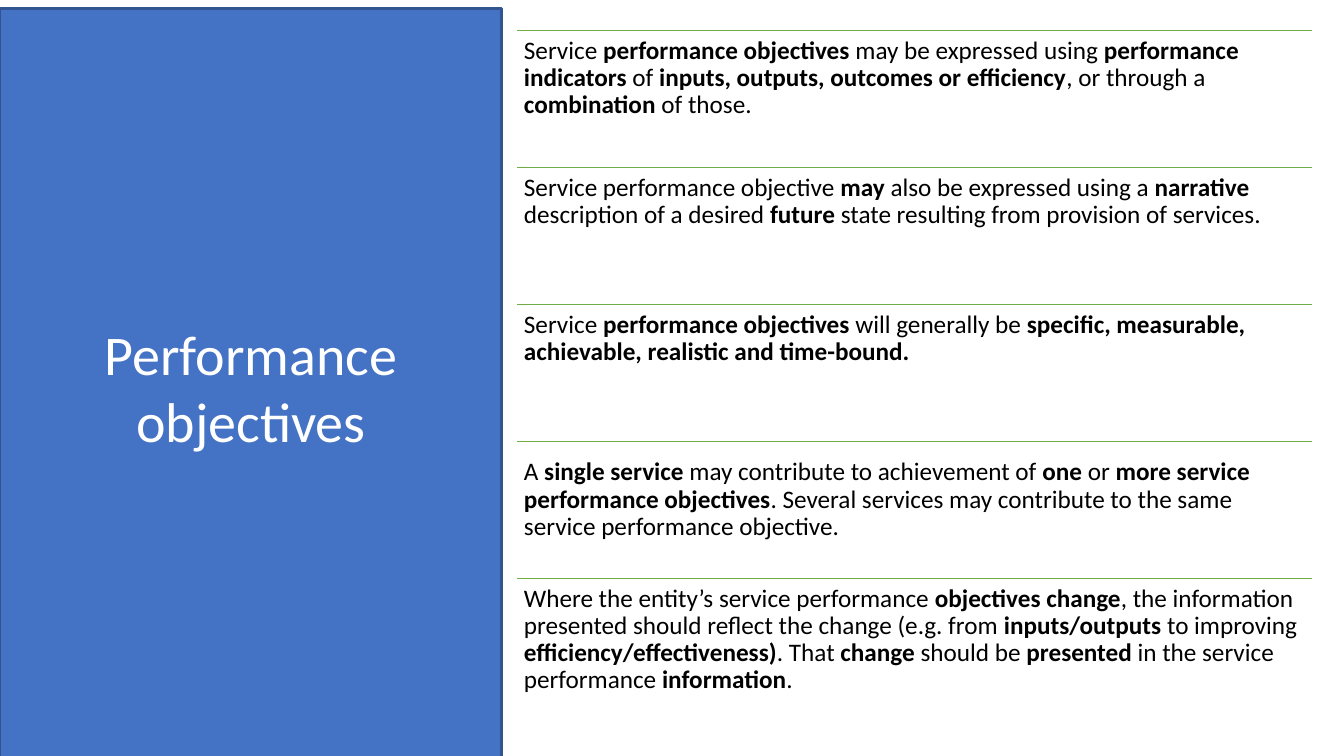
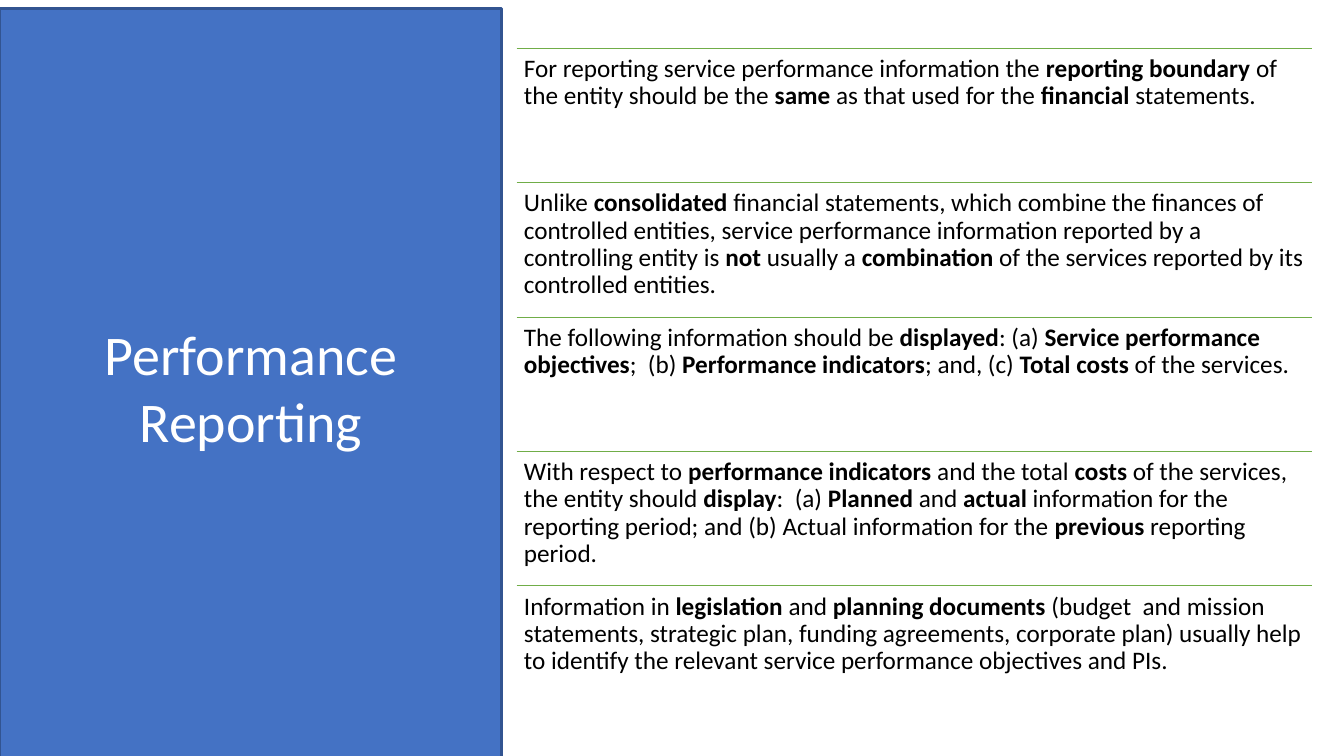
import pptx
import pptx.util
import pptx.dml.color
import pptx.enum.shapes
import pptx.enum.text
import pptx.oxml.ns
import lxml.etree

PX = 9525
FONT = "Calibri"
BLUE, NAVY, GREEN, WHITE, BLACK = "4472C4", "325491", "70AD47", "FFFFFF", "000000"
PANEL_BOX = (0, 8, 478, 720)
INSET = 7

SLIDES = [
    {
        "title": "Performance objectives",
        "box": (492, 29, 758, 652),
        "shifts": {3: 10},
        "points": [
            "Service **performance objectives **may be expressed using **performance indicators** of "
            "**inputs, outputs, outcomes or efficiency**, or through a **combination **of those.",
            "Service performance objective **may** also be expressed using a **narrative** description "
            "of a desired **future** state resulting from provision of services.",
            "Service **performance objectives** will generally be "
            "**specific, measurable, achievable, realistic and time-bound.**",
            "A **single service** may contribute to achievement of **one** or **more service performance "
            "objectives**. Several services may contribute to the same service performance objective.",
            "Where the entity’s service performance **objectives change**, the information presented "
            "should reflect the change (e.g. from **inputs/outputs **to improving "
            "**efficiency/effectiveness)**. That **change** should be **presented** in the service "
            "performance **information**.",
        ],
    },
    {
        "title": "Performance Reporting",
        "box": (492, 46, 758, 640),
        "shifts": {},
        "points": [
            "For reporting service performance information the **reporting boundary **of the entity "
            "should be the **same** as that used for the **financial** statements.",
            "Unlike **consolidated** financial statements, which combine the finances of controlled "
            "entities, service performance information reported by a controlling entity is **not** "
            "usually a **combination** of the services reported by its controlled entities.",
            "The following information should be **displayed**: (a) **Service performance objectives**;  "
            "(b) **Performance indicators**; and, (c) **Total costs **of the services.",
            "With respect to **performance indicators **and the total **costs** of the services, the "
            "entity should **display**:  (a) **Planned** and **actual** information for the reporting "
            "period; and (b) Actual information for the **previous** reporting period.",
            "Information in **legislation** and **planning documents** (budget  and mission statements, "
            "strategic plan, funding agreements, corporate plan) usually help to identify the relevant "
            "service performance objectives and PIs.",
        ],
    },
]


def px(*values):
    return [pptx.util.Emu(round(v * PX)) for v in values]


def rgb(value):
    return pptx.dml.color.RGBColor.from_string(value)


def set_font(p, size, color):
    p.font.name = FONT
    p.font.size = pptx.util.Pt(size)
    p.font.color.rgb = rgb(color)


def add_panel(s, box, title):
    sp = s.shapes.add_shape(pptx.enum.shapes.MSO_SHAPE.RECTANGLE, *px(*box))
    sp.shadow.inherit = False
    sp.fill.solid()
    sp.fill.fore_color.rgb = rgb(BLUE)
    sp.line.color.rgb = rgb(NAVY)
    sp.line.width = pptx.util.Pt(2)
    tf = sp.text_frame
    tf.word_wrap = True
    tf.vertical_anchor = pptx.enum.text.MSO_ANCHOR.MIDDLE
    p = tf.paragraphs[0]
    p.text = title
    p.alignment = pptx.enum.text.PP_ALIGN.CENTER
    set_font(p, 40, WHITE)


def add_rule(s, x, y, w):
    line = s.shapes.add_connector(
        pptx.enum.shapes.MSO_CONNECTOR.STRAIGHT, *px(x, y, x + w, y))
    line.line.color.rgb = rgb(GREEN)
    line.line.width = pptx.util.Pt(0.75)
    sp_pr = line._element.spPr
    lxml.etree.SubElement(sp_pr, pptx.oxml.ns.qn("a:effectLst"))


def add_point(s, box, text):
    tf = s.shapes.add_textbox(*px(*box)).text_frame
    tf.word_wrap = True
    inset = px(INSET)[0]
    tf.margin_left = tf.margin_top = tf.margin_right = tf.margin_bottom = inset
    p = tf.paragraphs[0]
    p.line_spacing = 0.9
    set_font(p, 18, BLACK)
    for i, part in enumerate(text.split("**")):
        if part:
            r = p.add_run()
            r.text = part
            if i % 2:
                r.font.bold = True


def add_points(s, box, points, shifts):
    x, y, w, h = box
    row_h = h / len(points)
    for i, text in enumerate(points):
        top = y + i * row_h
        add_rule(s, x, top, w)
        add_point(s, (x, top + shifts.get(i, 0), w, row_h), text)


def main():
    prs = pptx.Presentation()
    prs.slide_width, prs.slide_height = px(1280, 720)
    for content in SLIDES:
        s = prs.slides.add_slide(prs.slide_layouts[6])
        add_panel(s, PANEL_BOX, content["title"])
        add_points(s, content["box"], content["points"], content["shifts"])
    prs.save("out.pptx")


if __name__ == "__main__":
    main()
